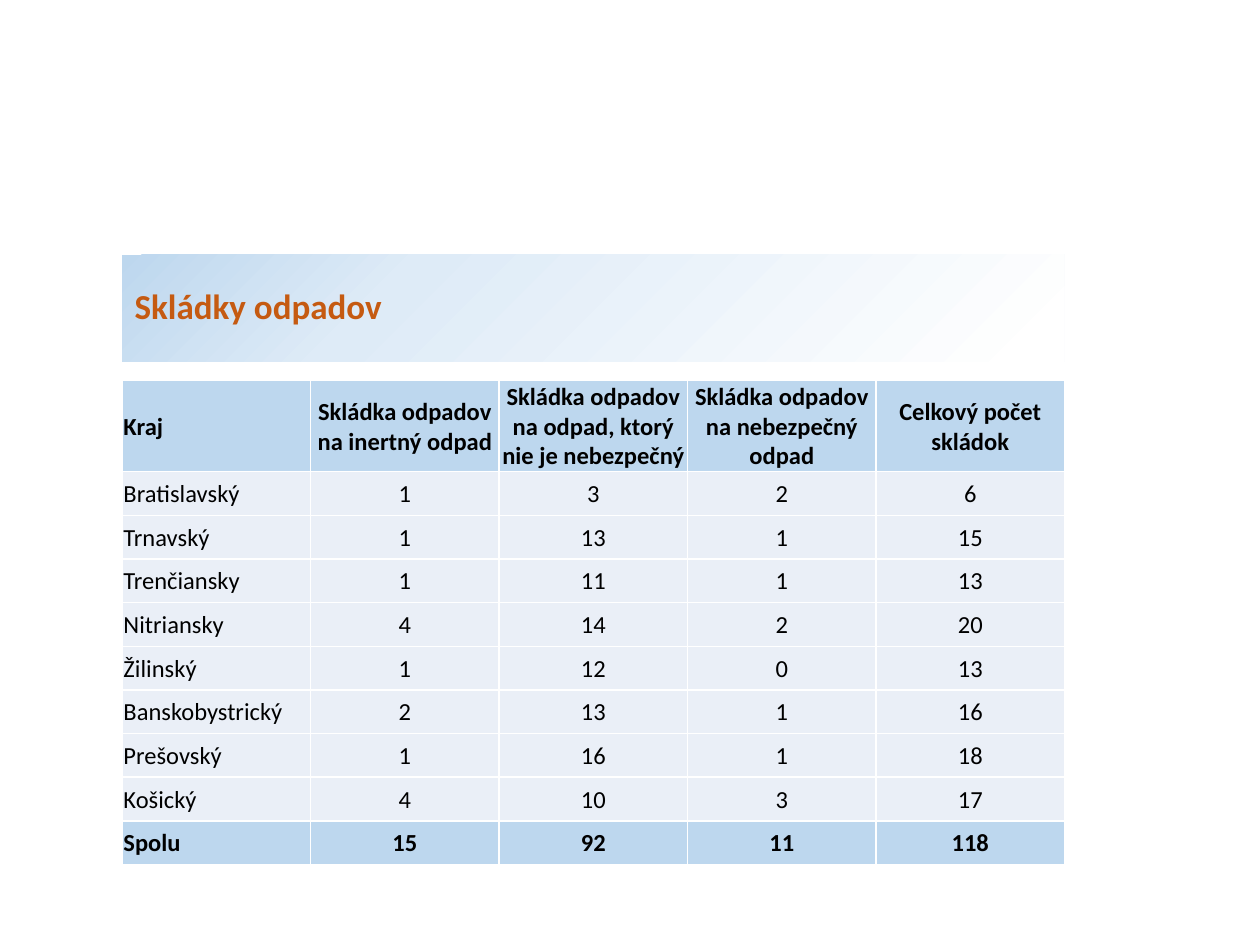
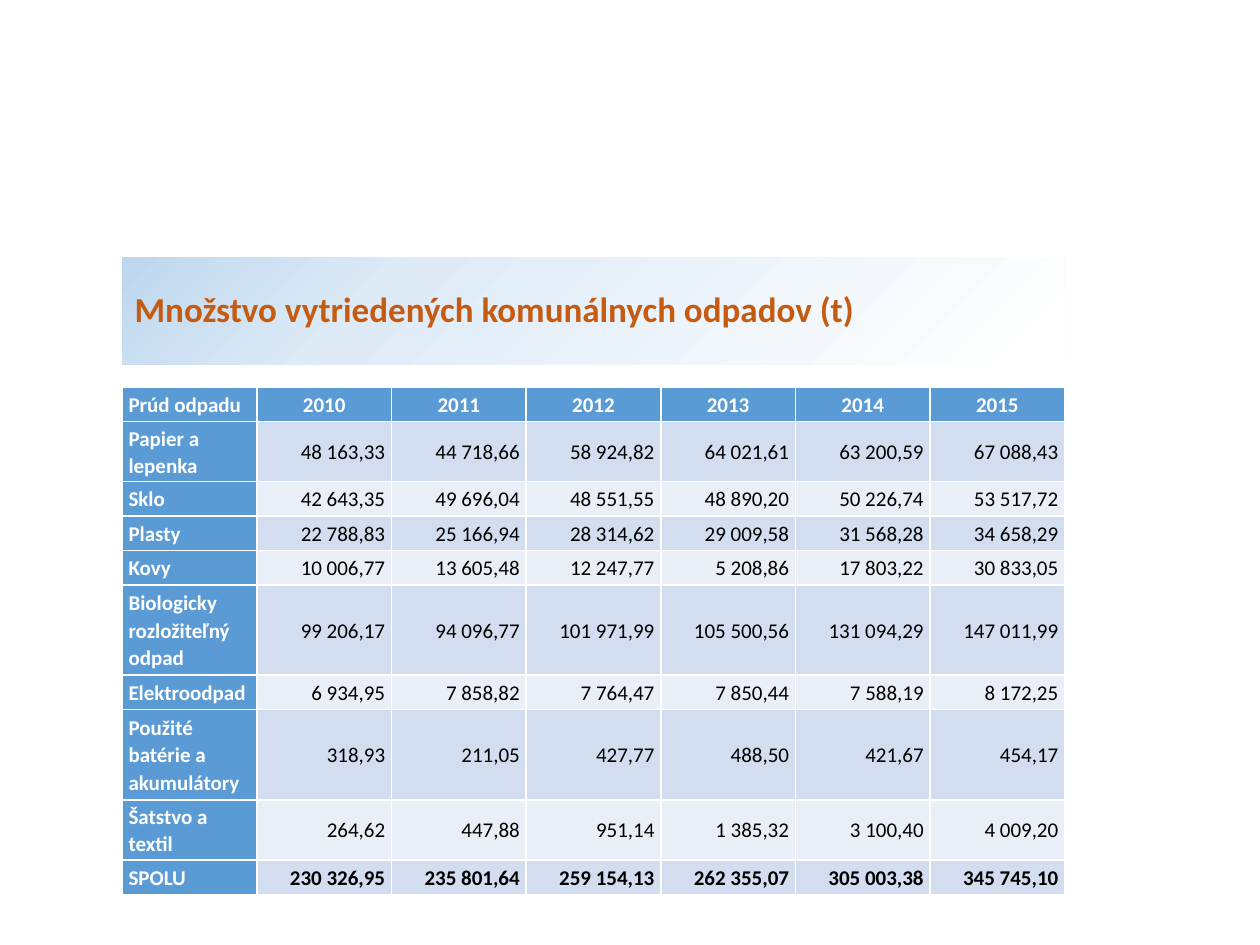
import pptx
import pptx.dml.color
import pptx.enum.shapes
import pptx.enum.text
import pptx.oxml
import pptx.oxml.ns
import pptx.util

EMU_PER_PX = 3048  # 300 px to the inch
PAGE_WIDTH, PAGE_HEIGHT = 3000, 2250
LEFT, CONTENT_WIDTH, BAND_HEIGHT = 291, 2244, 255

COLORS = {
    "title": "C55A11",
    "text": "000000",
    "white": "FFFFFF",
    "pale": "DEEBF7",
    "sky": "BDD7EE",
    "blue": "5B9BD5",
    "stripe_dark": "D2DEEF",
    "stripe_light": "EAEFF7",
}
BAND_STOPS = [(3, "white"), (71, "pale"), (100, "sky")]
ALIGN = pptx.enum.text.PP_ALIGN
MIDDLE = pptx.enum.text.MSO_ANCHOR.MIDDLE

LANDFILLS = [
    ["Kraj", "Skládka odpadov na inertný odpad",
     "Skládka odpadov na odpad, ktorý nie je nebezpečný",
     "Skládka odpadov na nebezpečný odpad", "Celkový počet skládok"],
    ["Bratislavský", "1", "3", "2", "6"],
    ["Trnavský", "1", "13", "1", "15"],
    ["Trenčiansky", "1", "11", "1", "13"],
    ["Nitriansky", "4", "14", "2", "20"],
    ["Žilinský", "1", "12", "0", "13"],
    ["Banskobystrický", "2", "13", "1", "16"],
    ["Prešovský", "1", "16", "1", "18"],
    ["Košický", "4", "10", "3", "17"],
    ["Spolu", "15", "92", "11", "118"],
]
SORTED_WASTE = [
    ["Prúd odpadu", "2010", "2011", "2012", "2013", "2014", "2015"],
    ["Papier a lepenka", "48 163,33", "44 718,66", "58 924,82",
     "64 021,61", "63 200,59", "67 088,43"],
    ["Sklo", "42 643,35", "49 696,04", "48 551,55",
     "48 890,20", "50 226,74", "53 517,72"],
    ["Plasty", "22 788,83", "25 166,94", "28 314,62",
     "29 009,58", "31 568,28", "34 658,29"],
    ["Kovy", "10 006,77", "13 605,48", "12 247,77",
     "5 208,86", "17 803,22", "30 833,05"],
    ["Biologicky rozložiteľný odpad", "99 206,17", "94 096,77", "101 971,99",
     "105 500,56", "131 094,29", "147 011,99"],
    ["Elektroodpad", "6 934,95", "7 858,82", "7 764,47",
     "7 850,44", "7 588,19", "8 172,25"],
    ["Použité batérie a akumulátory", "318,93", "211,05", "427,77",
     "488,50", "421,67", "454,17"],
    ["Šatstvo a textil", "264,62", "447,88", "951,14",
     "1 385,32", "3 100,40", "4 009,20"],
    ["SPOLU", "230 326,95", "235 801,64", "259 154,13",
     "262 355,07", "305 003,38", "345 745,10"],
]


def px(length):
    return pptx.util.Emu(length * EMU_PER_PX)


def set_all(target, values):
    for name, value in values.items():
        setattr(target, name, value)


def drawing_xml(tag, attributes, content):
    namespace = pptx.oxml.ns.nsdecls("a")
    return pptx.oxml.parse_xml(
        f"<a:{tag} {namespace} {attributes}>{content}</a:{tag}>")


def color_xml(color):
    return f'<a:srgbClr val="{COLORS[color]}"/>'


class SlideBuilder:
    def __init__(self):
        self.deck = pptx.Presentation()
        set_all(self.deck, {"slide_width": px(PAGE_WIDTH), "slide_height": px(PAGE_HEIGHT)})
        self.page = None

    def new_page(self):
        self.page = self.deck.slides.add_slide(self.deck.slide_layouts[6])

    def add_text(self, frame, text, color, size, bold, align, spacing):
        para = frame.paragraphs[0]
        set_all(para, {"alignment": align, "line_spacing": spacing})
        span = para.add_run()
        span.text = text
        set_all(span.font, {"name": "Calibri", "size": pptx.util.Pt(size), "bold": bold})
        span.font.color.rgb = pptx.dml.color.RGBColor.from_string(COLORS[color])

    def title_band(self, text, top):
        """Add the title on a band that fades from the top left corner."""
        band = self.page.shapes.add_shape(
            pptx.enum.shapes.MSO_SHAPE.RECTANGLE,
            px(LEFT), px(top), px(CONTENT_WIDTH), px(BAND_HEIGHT))
        band.shadow.inherit = False
        band.line.fill.background()
        stops = "".join(f'<a:gs pos="{percent * 1000}">{color_xml(color)}</a:gs>'
                        for percent, color in BAND_STOPS)
        gradient = drawing_xml(
            "gradFill", 'rotWithShape="1"',
            f'<a:gsLst>{stops}</a:gsLst><a:path path="circle">'
            '<a:fillToRect l="100000" t="100000"/></a:path>')
        geometry = band.element.spPr.find(pptx.oxml.ns.qn("a:prstGeom"))
        geometry.addnext(gradient)
        set_all(band.text_frame, {"word_wrap": True, "vertical_anchor": MIDDLE})
        self.add_text(band.text_frame, text, "title", 20, True, ALIGN.LEFT, 0.9)

    def table(self, rows, top, heights, margins, size, spacing, cell_style):
        """Add a table; cell_style(row, column) gives fill, colour, bold, alignment."""
        table = self.page.shapes.add_table(
            len(rows), len(rows[0]), px(LEFT), px(top),
            px(CONTENT_WIDTH), px(sum(heights))).table
        set_all(table, {"first_row": False, "horz_banding": False})
        for row, (texts, height) in enumerate(zip(rows, heights)):
            table.rows[row].height = px(height)
            for column, text in enumerate(texts):
                cell = table.cell(row, column)
                fill, color, bold, align = cell_style(row, column)
                set_all(cell, {"vertical_anchor": MIDDLE, **margins})
                cell.fill.solid()
                cell.fill.fore_color.rgb = pptx.dml.color.RGBColor.from_string(COLORS[fill])
                self.cell_borders(cell)
                self.add_text(cell.text_frame, text, color, size, bold, align, spacing)

    def cell_borders(self, cell):
        properties = cell._tc.get_or_add_tcPr()
        for index, side in enumerate(["lnL", "lnR", "lnT", "lnB"]):
            properties.insert(index, drawing_xml(
                side, 'w="12700"', f'<a:solidFill>{color_xml("white")}</a:solidFill>'))


def cell_margins(side, top):
    return {"margin_left": px(side), "margin_right": px(side),
            "margin_top": px(top), "margin_bottom": px(0)}


def landfill_style(row, column):
    outer = row in (0, len(LANDFILLS) - 1)
    fill = "sky" if outer else "stripe_light"
    return fill, "text", outer, ALIGN.CENTER if column else ALIGN.LEFT


def sorted_waste_style(row, column):
    if row == 0 or column == 0:
        return "blue", "white", True, ALIGN.CENTER if column else ALIGN.LEFT
    stripe = "stripe_dark" if row % 2 else "stripe_light"
    return stripe, "text", row == len(SORTED_WASTE) - 1, ALIGN.RIGHT


def landfill_page(builder):
    builder.new_page()
    builder.title_band("Skládky odpadov", 606)
    heights = [217] + [104] * (len(LANDFILLS) - 1)
    builder.table(LANDFILLS, 906, heights, cell_margins(3, 3), 14, 1.0, landfill_style)


def sorted_waste_page(builder):
    builder.new_page()
    builder.title_band("Množstvo vytriedených komunálnych odpadov (t)", 613)
    height_by_lines = {1: 82, 2: 143, 3: 215}
    label_lines = [1, 2, 1, 1, 1, 3, 1, 3, 2, 1]
    heights = [height_by_lines[lines] for lines in label_lines]
    builder.table(SORTED_WASTE, 922, heights, cell_margins(15, 0), 12, 1.07,
                  sorted_waste_style)


def main():
    builder = SlideBuilder()
    landfill_page(builder)
    sorted_waste_page(builder)
    builder.deck.save("out.pptx")


if __name__ == "__main__":
    main()
